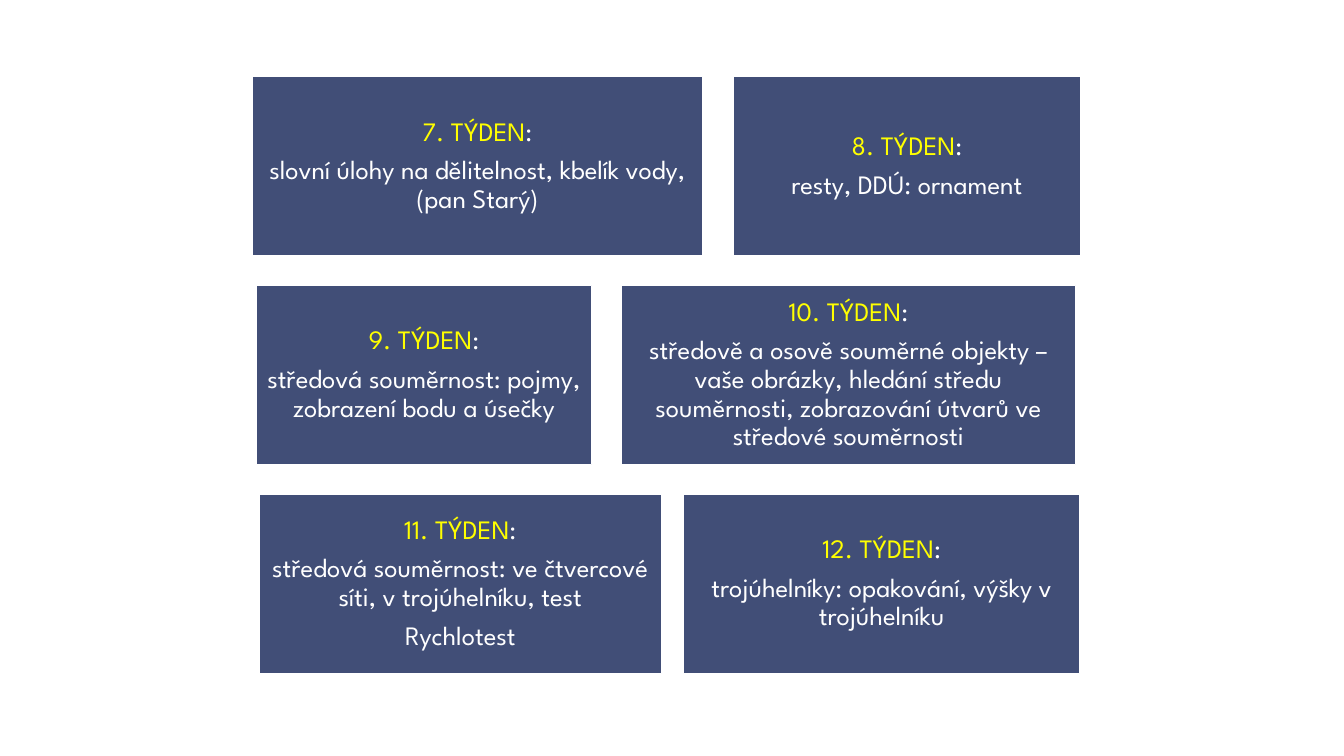
"""Build a slide with the plan for weeks 7 to 12 of a mathematics course."""
from pptx import Presentation
from pptx.dml.color import RGBColor
from pptx.enum.shapes import MSO_SHAPE
from pptx.enum.text import MSO_ANCHOR, PP_ALIGN
from pptx.util import Inches, Pt

RECTANGLE = MSO_SHAPE.RECTANGLE
MIDDLE = MSO_ANCHOR.MIDDLE
CENTER = PP_ALIGN.CENTER

FIRST_WEEK = 7
WEEK_ROWS = [
    [
        (2.5, 4.47, ["slovní úlohy na dělitelnost, kbelík vody, (pan Starý)"]),
        (7.27, 3.45, ["resty, DDÚ: ornament"]),
    ],
    [
        (2.54, 3.33, ["středová souměrnost: pojmy, zobrazení bodu a úsečky"]),
        (6.16, 4.51, ["středově a osově souměrné objekty – vaše obrázky, hledání středu "
                      "souměrnosti, zobrazování útvarů ve středové souměrnosti"]),
    ],
    [
        (2.57, 3.99, ["středová souměrnost: ve čtvercové síti, v trojúhelníku, test",
                      "Rychlotest"]),
        (6.78, 3.93, ["trojúhelníky: opakování, výšky v trojúhelníku"]),
    ],
]
FIRST_TOP, ROW_PITCH, BOX_HEIGHT, INSET = 0.76, 2.07, 1.78, 0.08
NAVY, WHITE, YELLOW = "414E77", "FFFFFF", "FFFF00"


def color(value):
    return RGBColor.from_string(value)


def format_paragraph(para):
    para.alignment = CENTER
    para.line_spacing = 0.9
    para.space_after = Pt(7)
    para.font.name = "League Spartan"
    para.font.size = Pt(19)
    para.font.color.rgb = color(WHITE)


def add_week(page, week, left, top, width, topics):
    box = page.shapes.add_shape(
        RECTANGLE, Inches(left), Inches(top), Inches(width), Inches(BOX_HEIGHT))
    box.shadow.inherit = False
    box.fill.solid()
    box.fill.fore_color.rgb = color(NAVY)
    box.line.color.rgb = color(WHITE)
    box.line.width = Pt(1)
    frame = box.text_frame
    frame.word_wrap = True
    frame.vertical_anchor = MIDDLE
    frame.margin_left = frame.margin_right = Inches(INSET)
    frame.margin_top = frame.margin_bottom = Inches(INSET)
    heading = frame.paragraphs[0]
    format_paragraph(heading)
    for text, tone in ((f"{week}. TÝDEN", YELLOW), (":", WHITE)):
        span = heading.add_run()
        span.text = text
        span.font.color.rgb = color(tone)
    for topic in topics:
        para = frame.add_paragraph()
        format_paragraph(para)
        para.add_run().text = topic


def main():
    deck = Presentation()
    deck.slide_width, deck.slide_height = Inches(13.33), Inches(7.5)
    page = deck.slides.add_slide(deck.slide_layouts[6])
    week = FIRST_WEEK
    for row, boxes in enumerate(WEEK_ROWS):
        for left, width, topics in boxes:
            add_week(page, week, left, FIRST_TOP + row * ROW_PITCH, width, topics)
            week += 1
    deck.save("out.pptx")


if __name__ == "__main__":
    main()
